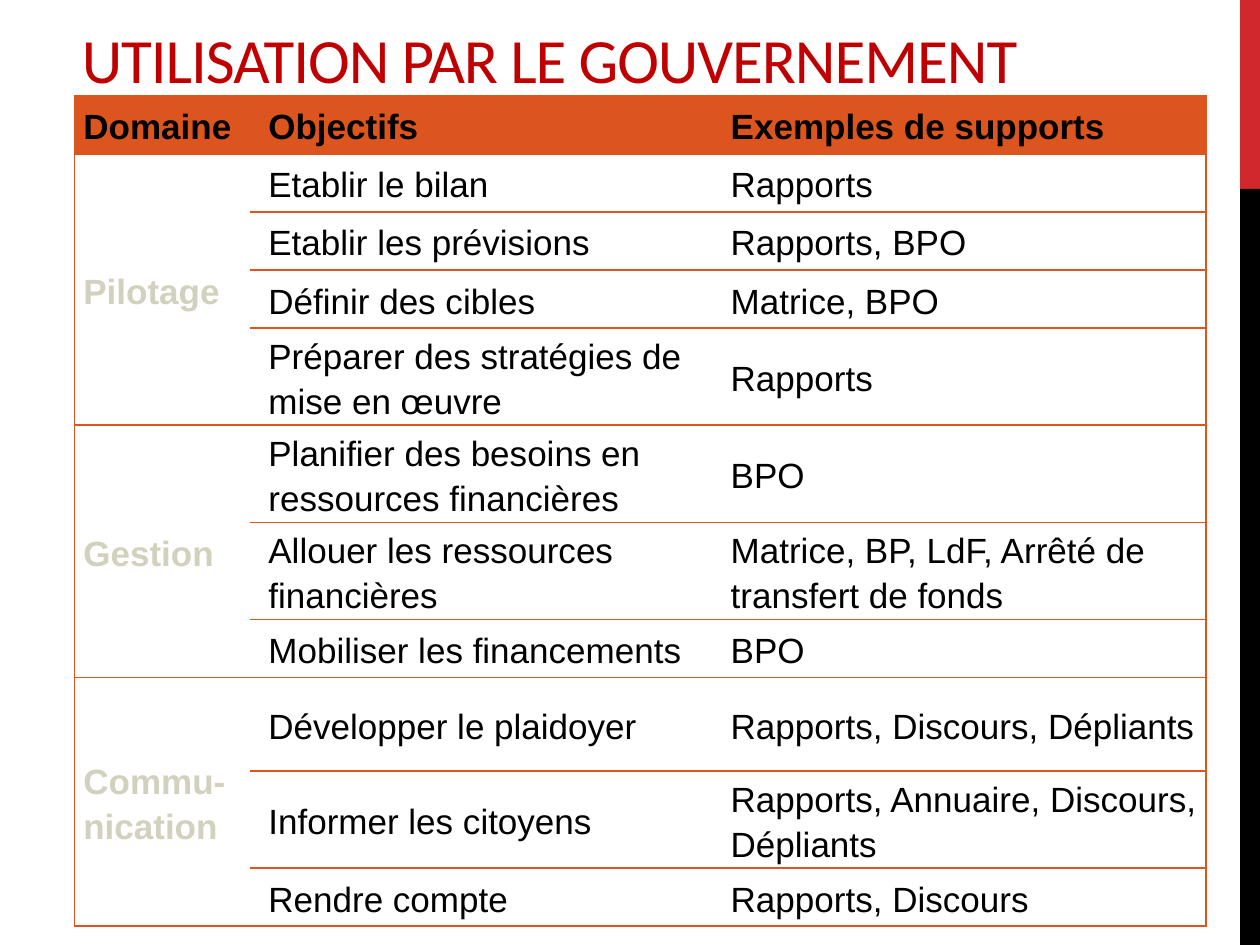
from dataclasses import dataclass
from pptx import Presentation
from pptx.dml.color import RGBColor as Rgb
from pptx.enum.shapes import MSO_SHAPE as Form
from pptx.enum.text import MSO_ANCHOR as Anchor
from pptx.oxml import parse_xml as to_xml
from pptx.oxml.ns import nsdecls, qn
from pptx.util import Cm, Pt


@dataclass(frozen=True)
class Theme:
    black: str = "000000"
    red: str = "D1282E"
    title: str = "C00000"
    accent: str = "DC551F"
    label: str = "D2D1BE"
    head_font: str = "Calibri"
    body_font: str = "Arial"
    head_size: int = 36
    body_size: int = 20
    line: int = 1
    grid: str = "{2D5ABB26-0587-4C30-8999-92F81FD0307C}"


class Page:
    def __init__(self, deck, theme):
        self.theme = theme
        self.slide = deck.slides.add_slide(deck.slide_layouts[6])

    def bar(self, left, top, width, height, color):
        shape = self.slide.shapes.add_shape(
            Form.RECTANGLE, Cm(left), Cm(top), Cm(width), Cm(height))
        shape.shadow.inherit = False
        shape.fill.solid()
        shape.fill.fore_color.rgb = Rgb.from_string(color)
        shape.line.fill.background()

    def style(self, run, font, size, color, bold=False):
        run.font.name = font
        run.font.size = Pt(size)
        run.font.bold = bold
        run.font.color.rgb = Rgb.from_string(color)

    def title(self, text, left, top, width, height):
        box = self.slide.shapes.add_textbox(
            Cm(left), Cm(top), Cm(width), Cm(height))
        frame = box.text_frame
        frame.word_wrap = True
        frame.vertical_anchor = Anchor.BOTTOM
        frame.margin_top, frame.margin_bottom = Cm(0), Cm(0.08)
        frame.text = text
        run = frame.paragraphs[0].runs[0]
        look = self.theme
        self.style(run, look.head_font, look.head_size, look.title)
        run.font._element.set("spc", "-60")

    def edge(self, cell, sides):
        props = cell._tc.get_or_add_tcPr()
        for spot, side in enumerate(sides):
            props.insert(spot, to_xml(
                f'<a:ln{side} {nsdecls("a")} w="{Pt(self.theme.line)}"><a:solidFill>'
                f'<a:srgbClr val="{self.theme.accent}"/></a:solidFill></a:ln{side}>'))

    def fill(self, cell, text, color, bold, indent):
        cell.vertical_anchor = Anchor.MIDDLE
        cell.margin_left = cell.margin_right = Cm(0.18)
        cell.margin_top = cell.margin_bottom = Cm(0)
        cell.text_frame.text = text
        para = cell.text_frame.paragraphs[0]
        para.line_spacing = 1.15
        if indent:
            para._p.get_or_add_pPr().set("marL", str(Cm(0.2)))
        for run in para.runs:
            self.style(run, self.theme.body_font, self.theme.body_size, color, bold)

    def table(self, left, top, widths, heights, rows):
        look = self.theme
        frame = self.slide.shapes.add_table(
            len(rows), len(widths), Cm(left), Cm(top),
            Cm(sum(widths)), Cm(sum(heights)))
        table = frame.table
        table._tbl.tblPr.find(qn("a:tableStyleId")).text = look.grid
        for col, width in zip(table.columns, widths):
            col.width = Cm(width)
        for row, height in zip(table.rows, heights):
            row.height = Cm(height)
        starts = [r for r, row in enumerate(rows) if row[0]]
        for first, after in zip(starts, starts[1:] + [len(rows)]):
            if after - first > 1:
                table.cell(first, 0).merge(table.cell(after - 1, 0))
        last = len(widths) - 1
        for r, row in enumerate(rows):
            for c, text in enumerate(row):
                cell = table.cell(r, c)
                color = look.label if r and not c else look.black
                self.fill(cell, text, color, not r or not c, c > 0)
                if r:
                    cell.fill.background()
                else:
                    cell.fill.solid()
                    cell.fill.fore_color.rgb = Rgb.from_string(look.accent)
                sides = "L" if c == 0 else "R" if c == last else ""
                if c or r in starts:
                    sides += "TB"
                self.edge(cell, sides)


ROWS = [
    ("Domaine", "Objectifs", "Exemples de supports"),
    ("Pilotage", "Etablir le bilan", "Rapports"),
    ("", "Etablir les prévisions", "Rapports, BPO"),
    ("", "Définir des cibles", "Matrice, BPO"),
    ("", "Préparer des stratégies de mise en œuvre", "Rapports"),
    ("Gestion", "Planifier des besoins en ressources financières", "BPO"),
    ("", "Allouer les ressources financières",
     "Matrice, BP, LdF, Arrêté de transfert de fonds"),
    ("", "Mobiliser les financements", "BPO"),
    ("Commu-nication", "Développer le plaidoyer", "Rapports, Discours, Dépliants"),
    ("", "Informer les citoyens", "Rapports, Annuaire, Discours, Dépliants"),
    ("", "Rendre compte", "Rapports, Discours"),
]


def main():
    deck = Presentation()
    deck.slide_width, deck.slide_height = Cm(25.4), Cm(19.05)
    theme = Theme()
    page = Page(deck, theme)
    page.bar(25, 0, 0.4, 3.81, theme.red)
    page.bar(25, 3.81, 0.4, 15.24, theme.black)
    page.title("UTILISATION PAR LE GOUVERNEMENT", 1.4, 0.38, 25.1, 1.63)
    low, mid, high = 1.17, 1.88, 1.96
    heights = [low] * 4 + [high] * 3 + [low, mid, high, low]
    page.table(1.5, 1.93, [3.53, 9.32, 9.96], heights, ROWS)
    deck.save("out.pptx")


if __name__ == "__main__":
    main()
